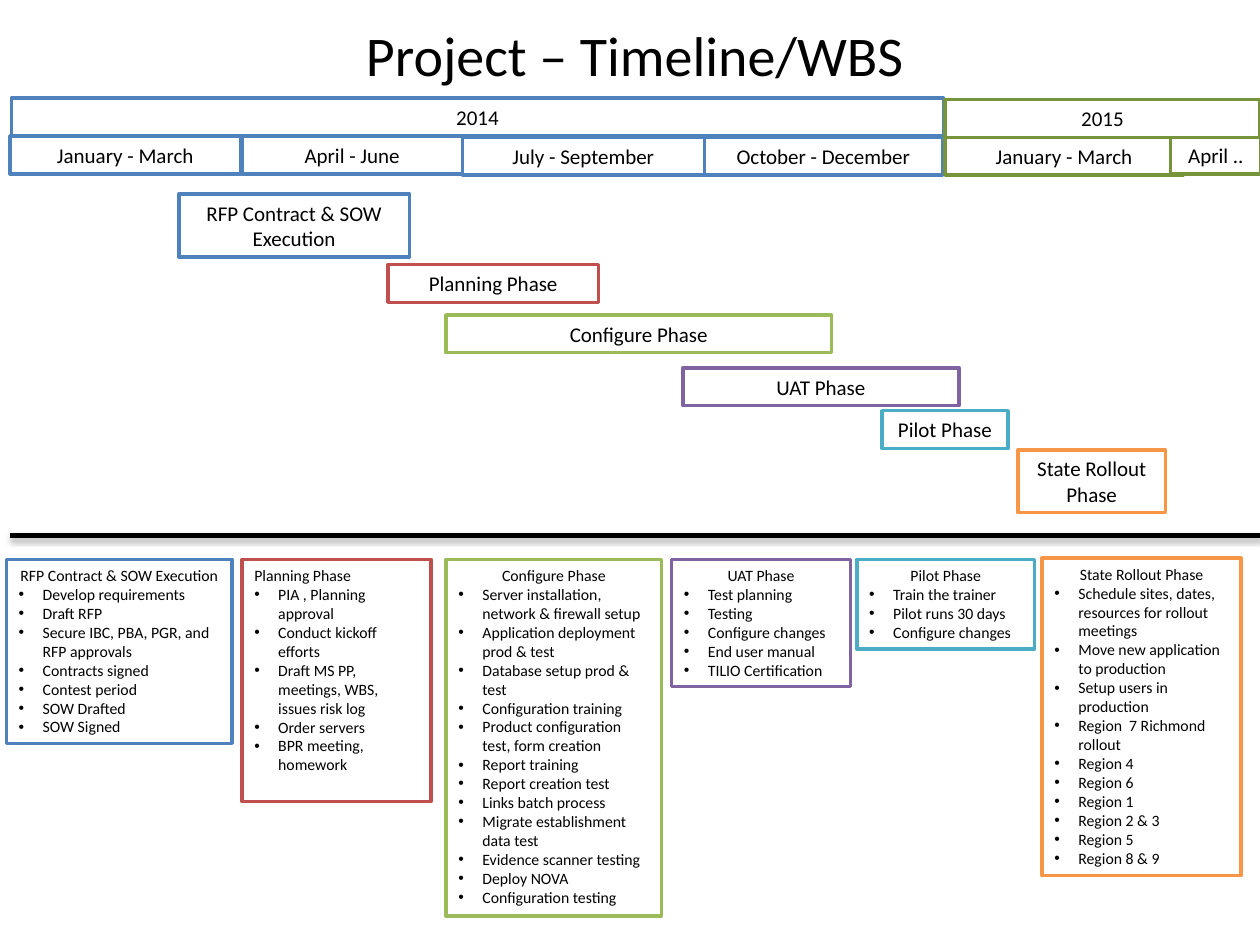
from lxml.etree import SubElement
from pptx import Presentation
from pptx.dml.color import RGBColor
from pptx.enum.shapes import MSO_CONNECTOR, MSO_SHAPE
from pptx.enum.text import MSO_ANCHOR, PP_ALIGN
from pptx.oxml.ns import qn
from pptx.util import Inches, Pt

BLACK = RGBColor(0x00, 0x00, 0x00)
WHITE = RGBColor(0xFF, 0xFF, 0xFF)
BLUE = RGBColor(0x4F, 0x81, 0xBD)
RED = RGBColor(0xC0, 0x50, 0x4D)
GREEN = RGBColor(0x9B, 0xBB, 0x59)
PURPLE = RGBColor(0x80, 0x64, 0xA2)
TEAL = RGBColor(0x4B, 0xAC, 0xC6)
ORANGE = RGBColor(0xF7, 0x96, 0x46)
DARK_GREEN = RGBColor(0x77, 0x93, 0x3C)
BAR_HEIGHT = 0.3


def write_line(paragraph, text, size, align=PP_ALIGN.CENTER):
    paragraph.text = text
    paragraph.alignment = align
    font_format = {"name": "Calibri", "size": Pt(size)}
    for attribute, value in font_format.items():
        setattr(paragraph.font, attribute, value)
    paragraph.font.color.rgb = BLACK


def add_box(place, color, heading, size=12, align=PP_ALIGN.CENTER):
    box = slide.shapes.add_shape(MSO_SHAPE.RECTANGLE, *map(Inches, place))
    box.shadow.inherit = False
    box.fill.solid()
    box.fill.fore_color.rgb = WHITE
    box.line.color.rgb = color
    box.line.width = Pt(2)
    frame_format = {"word_wrap": True, "vertical_anchor": MSO_ANCHOR.TOP}
    for attribute, value in frame_format.items():
        setattr(box.text_frame, attribute, value)
    write_line(box.text_frame.paragraphs[0], heading, size, align)
    return box.text_frame


presentation = Presentation()
presentation.slide_width = Inches(10)
presentation.slide_height = Inches(7.5)
slide = presentation.slides.add_slide(presentation.slide_layouts[5])

# Title
title = slide.shapes.title
title_place = {"left": 0.25, "top": 0.08, "width": 9.58, "height": 0.7}
for side, length in title_place.items():
    setattr(title, side, Inches(length))
title.text_frame.vertical_anchor = MSO_ANCHOR.MIDDLE
write_line(title.text_frame.paragraphs[0], "Project – Timeline/WBS", 32)

# Phases: name, colour, bar on the timeline, work box, heading alignment, tasks
phases = [
    ("RFP Contract & SOW Execution", BLUE,
     (1.42, 1.54, 1.83, 0.5), (0.05, 4.44, 1.79, 1.46), PP_ALIGN.CENTER,
     ["Develop requirements", "Draft RFP",
      "Secure IBC, PBA, PGR, and RFP approvals", "Contracts signed",
      "Contest period", "SOW Drafted", "SOW Signed"]),
    ("Planning Phase", RED,
     (3.08, 2.1, 1.67, BAR_HEIGHT), (1.92, 4.44, 1.5, 1.92), PP_ALIGN.LEFT,
     ["PIA , Planning approval", "Conduct kickoff efforts",
      "Draft MS PP, meetings, WBS, issues risk log", "Order servers",
      "BPR meeting, homework"]),
    ("Configure Phase", GREEN,
     (3.54, 2.5, 3.06, BAR_HEIGHT), (3.54, 4.44, 1.71, 2.83), PP_ALIGN.CENTER,
     ["Server installation, network & firewall setup",
      "Application deployment prod & test", "Database setup prod & test",
      "Configuration training", "Product configuration test, form creation",
      "Report training", "Report creation test", "Links batch process",
      "Migrate establishment data test", "Evidence scanner testing",
      "Deploy NOVA", "Configuration testing"]),
    ("UAT Phase", PURPLE,
     (5.42, 2.92, 2.19, BAR_HEIGHT), (5.33, 4.44, 1.42, 1.01), PP_ALIGN.CENTER,
     ["Test planning", "Testing", "Configure changes", "End user manual",
      "TILIO Certification"]),
    ("Pilot Phase", TEAL,
     (7, 3.26, 1, BAR_HEIGHT), (6.8, 4.44, 1.41, 0.71), PP_ALIGN.CENTER,
     ["Train the trainer", "Pilot runs 30 days", "Configure changes"]),
    ("State Rollout Phase", ORANGE,
     (8.08, 3.57, 1.17, 0.5), (8.27, 4.43, 1.58, 2.52), PP_ALIGN.CENTER,
     ["Schedule sites, dates, resources for rollout meetings",
      "Move new application to production", "Setup users in production",
      "Region  7 Richmond rollout", "Region 4", "Region 6", "Region 1",
      "Region 2 & 3", "Region 5", "Region 8 & 9"]),
]

# Phase bars
for name, color, bar_place, *_ in phases:
    add_box(bar_place, color, name)

# Work breakdown boxes
indent = Inches(0.19)
for name, color, _, work_place, heading_align, tasks in phases:
    work = add_box(work_place, color, name, 9, heading_align)
    for task in tasks:
        paragraph = work.add_paragraph()
        write_line(paragraph, task, 9, PP_ALIGN.LEFT)
        properties = paragraph._p.get_or_add_pPr()
        properties.set("marL", str(indent))
        properties.set("indent", str(-indent))
        bullet_font = properties.makeelement(qn("a:buFont"), {"typeface": "Arial"})
        bullet = properties.makeelement(qn("a:buChar"), {"char": "•"})
        properties.insert(0, bullet_font)
        properties.insert(1, bullet)

# Divider with a soft shadow
divider = slide.shapes.add_connector(
    MSO_CONNECTOR.STRAIGHT, Inches(0.08), Inches(4.25), Inches(10), Inches(4.25))
divider.line.color.rgb = BLACK
divider.line.width = Pt(3)
effects = SubElement(divider._element.spPr, qn("a:effectLst"))
shadow = SubElement(effects, qn("a:outerShdw"), {
    "blurRad": str(Pt(3.1)), "dist": str(Pt(1.8)), "dir": "5400000",
    "rotWithShape": "0"})
shadow_color = SubElement(shadow, qn("a:srgbClr"), {"val": str(BLACK)})
SubElement(shadow_color, qn("a:alpha"), {"val": "35000"})

# Calendar header: quarters, then years
calendar = [
    ("January - March", 0.08, 1.08, 1.83, BLUE),
    ("April - June", 1.92, 1.08, 1.75, BLUE),
    ("July - September", 3.67, 1.09, 1.92, BLUE),
    ("October - December", 5.59, 1.09, 1.89, BLUE),
    ("January - March", 7.5, 1.09, 1.89, DARK_GREEN),
    ("April ..", 9.29, 1.08, 0.72, DARK_GREEN),
    ("2014", 0.09, 0.78, 7.4, BLUE),
    ("2015", 7.5, 0.79, 2.5, DARK_GREEN),
]
for period, left, top, width, color in calendar:
    add_box((left, top, width, BAR_HEIGHT), color, period)

presentation.save("out.pptx")
